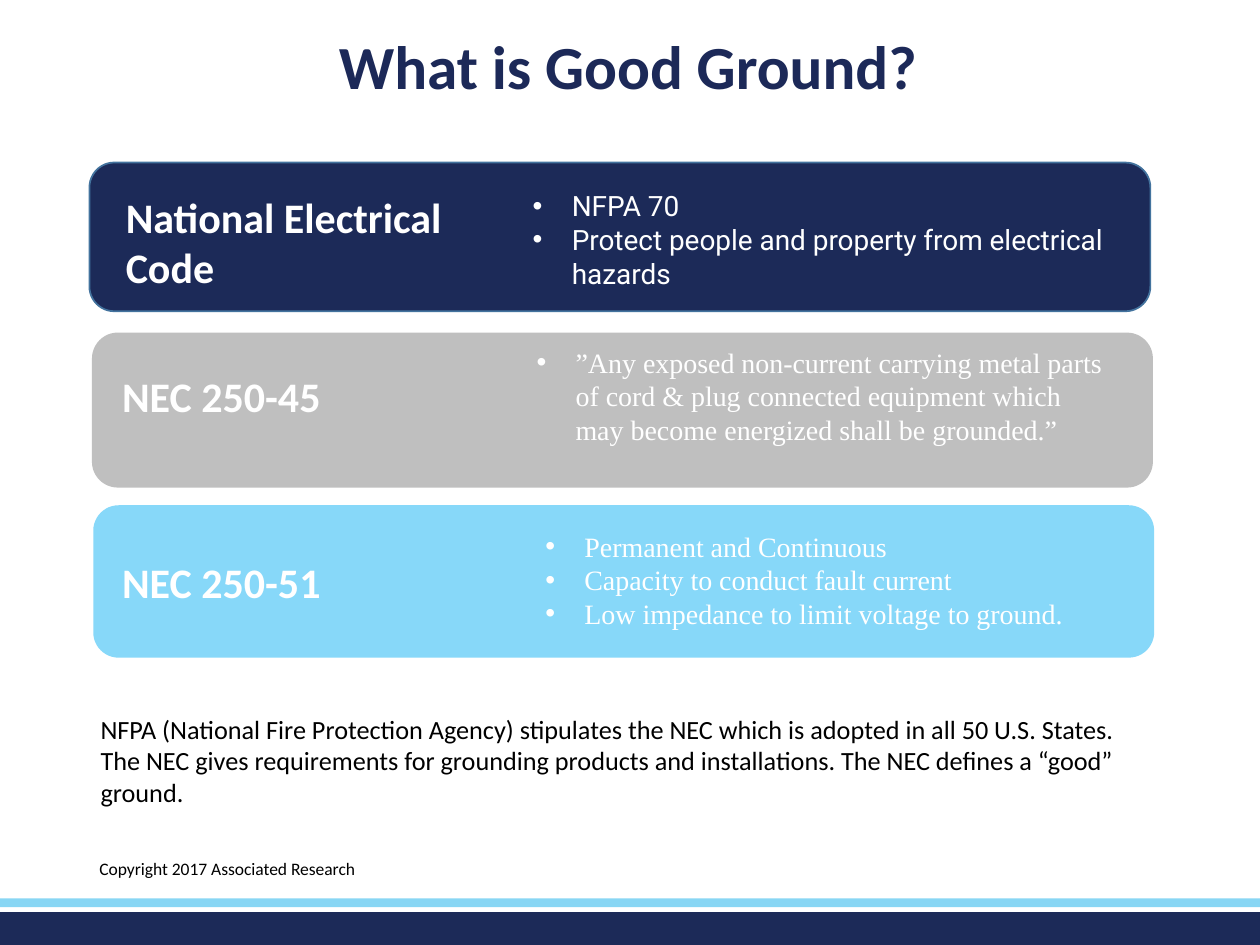
from dataclasses import dataclass

from lxml import etree
from pptx import Presentation
from pptx.dml.color import RGBColor
from pptx.enum.shapes import MSO_SHAPE
from pptx.enum.text import MSO_ANCHOR, PP_ALIGN
from pptx.oxml.ns import qn
from pptx.util import Inches, Pt

RECT = MSO_SHAPE.RECTANGLE
ROUND = MSO_SHAPE.ROUNDED_RECTANGLE
MIDDLE = MSO_ANCHOR.MIDDLE
CENTER = PP_ALIGN.CENTER

COLORS = {
    "navy": "1C2A58",
    "title": "1C2958",
    "edge": "43739E",
    "gray": "BFBFBF",
    "sky": "87D8F9",
    "stripe": "88D6F4",
    "white": "FFFFFF",
    "black": "000000",
}

Box = tuple[float, float, float, float]


@dataclass
class Font:
    size: float
    color: str
    name: str = "Calibri"
    bold: bool = False


@dataclass
class Panel:
    box: Box
    fill: str
    label: str
    label_box: Box
    points: list[str]
    points_box: Box
    face: str = "Times New Roman"
    line: str | None = None


PANELS = [
    Panel((0.71, 1.29, 8.42, 1.18), "navy",
          "National Electrical Code", (0.9, 1.47, 3.26, 0.91),
          ["NFPA 70", "Protect people and property from electrical hazards"],
          (4.13, 1.45, 4.96, 0.91), "Roboto", "edge"),
    Panel((0.73, 2.64, 8.42, 1.23), "gray",
          "NEC 250-45", (0.87, 2.89, 3.58, 0.5),
          ["”Any exposed non-current carrying metal parts of cord & plug connected "
           "equipment which may become energized shall be grounded.”"],
          (4.16, 2.69, 4.78, 1.48)),
    Panel((0.74, 4.01, 8.42, 1.21), "sky",
          "NEC 250-51", (0.87, 4.37, 3.58, 0.5),
          ["Permanent and Continuous", "Capacity to conduct fault current",
           "Low impedance to limit voltage to ground."],
          (4.23, 4.15, 4.82, 0.91)),
]

LABEL = Font(24, "white", bold=True)


def rgb(key: str) -> RGBColor:
    return RGBColor.from_string(COLORS[key])


def add_block(slide, kind, box: Box, fill: str, line: str | None = None) -> None:
    block = slide.shapes.add_shape(kind, *map(Inches, box))
    block.shadow.inherit = False
    block.fill.solid()
    block.fill.fore_color.rgb = rgb(fill)
    if line:
        block.line.color.rgb = rgb(line)
        block.line.width = Pt(1)
    else:
        block.line.fill.background()


def add_bullet(para) -> None:
    props = para._p.get_or_add_pPr()
    props.set("marL", str(Inches(0.31)))
    props.set("indent", str(Inches(-0.31)))
    etree.SubElement(props, qn("a:buFont"), typeface="Arial")
    etree.SubElement(props, qn("a:buChar"), char="•")


def add_text(slide, box: Box, lines: list[str], font: Font, bullets: bool = False):
    frame = slide.shapes.add_textbox(*map(Inches, box)).text_frame
    frame.word_wrap = True
    frame.text = "\n".join(lines)
    for para in frame.paragraphs:
        if bullets:
            add_bullet(para)
        for run in para.runs:
            run.font.name = font.name
            run.font.size = Pt(font.size)
            run.font.bold = font.bold
            run.font.color.rgb = rgb(font.color)
    return frame


def main() -> None:
    deck = Presentation()
    deck.slide_width, deck.slide_height = Inches(10), Inches(7.5)
    slide = deck.slides.add_slide(deck.slide_layouts[6])

    add_block(slide, RECT, (0, 7.24, 10, 0.26), "navy")
    add_block(slide, RECT, (0, 7.13, 10, 0.07), "stripe")
    add_text(slide, (0.69, 6.76, 2.65, 0.4),
             ["Copyright 2017 Associated Research"], Font(10, "black"))

    title = add_text(slide, (0.82, 0.26, 8.33, 0.58),
                     ["What is Good Ground?"], Font(35, "title", bold=True))
    title.vertical_anchor = MIDDLE
    title.paragraphs[0].alignment = CENTER
    title.paragraphs[0].line_spacing = 0.9

    add_text(slide, (0.7, 5.61, 8.44, 0.86),
             ["NFPA (National Fire Protection Agency) stipulates the NEC which is "
              "adopted in all 50 U.S. States. The NEC gives requirements for grounding "
              "products and installations. The NEC defines a “good” ground."],
             Font(15, "black"))

    for panel in PANELS:
        add_block(slide, ROUND, panel.box, panel.fill, panel.line)
        add_text(slide, panel.label_box, [panel.label], LABEL)
        add_text(slide, panel.points_box, panel.points,
                 Font(16, "white", panel.face), bullets=True)

    deck.save("out.pptx")


if __name__ == "__main__":
    main()
